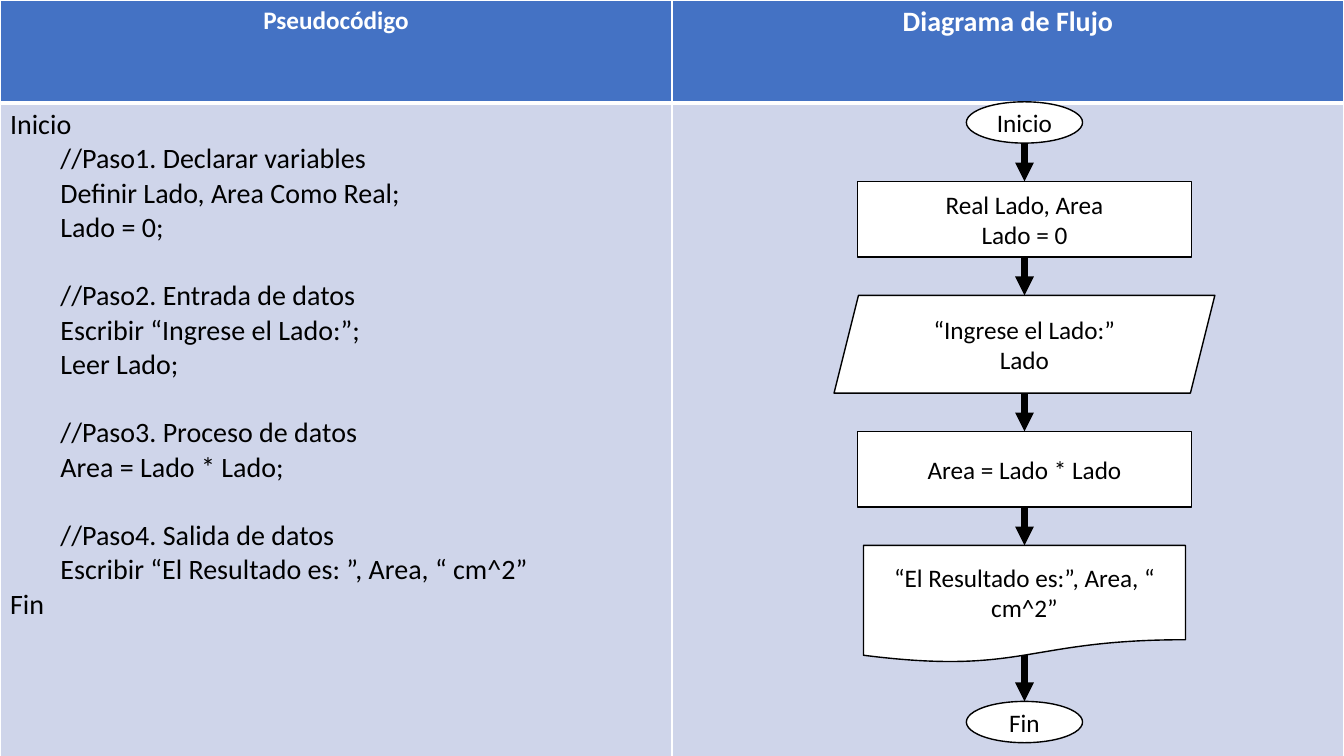
import pptx
import pptx.dml.color
import pptx.enum.shapes
import pptx.enum.text
import pptx.oxml
import pptx.oxml.ns
import pptx.util
from lxml import etree

Pt = pptx.util.Pt
KIND = pptx.enum.shapes.MSO_SHAPE
ALIGN = pptx.enum.text.PP_ALIGN
NS = pptx.oxml.ns.nsdecls("a")

WIDE, HIGH = 960, 540
HEAD = 73.4
MID = 731.8
GAP = 27.4
LINE = 24.4  # one line of 20 pt text
BLACK, WHITE, BLUE, PALE = "000000", "FFFFFF", "4472C4", "CFD5EA"

STEPS = [
    ["//Paso1. Declarar variables", "Definir Lado, Area Como Real;", "Lado = 0;"],
    ["//Paso2. Entrada de datos", "Escribir “Ingrese el Lado:”;", "Leer Lado;"],
    ["//Paso3. Proceso de datos", "Area = Lado * Lado;"],
    ["//Paso4. Salida de datos", "Escribir “El Resultado es: ”, Area, “ cm^2”"],
]

# Kind, width, height, lines of text, overlap of the arrow below
NODES = [
    (KIND.OVAL, 83, 29.5, ["Inicio"], 0),
    (KIND.RECTANGLE, 239, 54, ["Real Lado, Area", "Lado = 0"], 0),
    (KIND.PARALLELOGRAM, 272, 69.8, ["“Ingrese el Lado:”", "Lado"], 0),
    (KIND.RECTANGLE, 239, 54, ["Area = Lado * Lado"], 0),
    (KIND.FLOWCHART_DOCUMENT, 230, 84, ["“El Resultado es:”, Area, “ cm^2”"], 5.6),
    (KIND.OVAL, 83, 29.5, ["Fin"], 0),
]


def tint(code):
    return pptx.dml.color.RGBColor.from_string(code)


def paint(item, code):
    item.fill.solid()
    item.fill.fore_color.rgb = tint(code)


def write(frame, text, first=False, size=18, color=BLACK, bold=False,
          align=ALIGN.CENTER, indent=0, before=0):
    para = frame.paragraphs[0] if first else frame.add_paragraph()
    para.alignment = align
    if before:
        para.space_before = Pt(before)
    if indent:
        para.level = 1
        props = para._p.get_or_add_pPr()
        props.set("marL", str(Pt(indent)))
        props.set("indent", "0")
    run = para.add_run()
    run.text = text
    run.font.name = "Calibri"
    run.font.size = Pt(size)
    run.font.bold = bold
    run.font.color.rgb = tint(color)


def border(cell, top, low):
    props = cell._tc.get_or_add_tcPr()
    sides = [("lnL", 1), ("lnR", 1), ("lnT", top), ("lnB", low)]
    for spot, (side, width) in enumerate(sides):
        props.insert(spot, pptx.oxml.parse_xml(
            f'<a:{side} {NS} w="{Pt(width)}"><a:solidFill>'
            f'<a:srgbClr val="{WHITE}"/></a:solidFill></a:{side}>'))


def add_grid(slide):
    full = 764.6
    grid = slide.shapes.add_table(2, 2, 0, 0, Pt(WIDE), Pt(full)).table
    grid.horz_banding = False
    for col in grid.columns:
        col.width = Pt(WIDE / 2)
    grid.rows[0].height = Pt(HEAD)
    grid.rows[1].height = Pt(full - HEAD)
    for col in range(2):
        for row, (fill, top, low) in enumerate([(BLUE, 1, 3), (PALE, 3, 1)]):
            cell = grid.cell(row, col)
            paint(cell, fill)
            border(cell, top, low)
    return grid


def add_code(frame):
    left = ALIGN.LEFT
    write(frame, "Inicio", first=True, size=20, align=left)
    for step, lines in enumerate(STEPS):
        for row, text in enumerate(lines):
            space = LINE if step and not row else 0
            write(frame, text, size=20, align=left, indent=36, before=space)
    write(frame, "Fin", size=20, align=left)


def add_node(slide, kind, top, width, height, lines):
    node = slide.shapes.add_shape(
        kind, Pt(MID - width / 2), Pt(top), Pt(width), Pt(height))
    node.shadow.inherit = False
    paint(node, WHITE)
    node.line.color.rgb = tint(BLACK)
    node.line.width = Pt(1)
    frame = node.text_frame
    frame.word_wrap = True
    frame.vertical_anchor = pptx.enum.text.MSO_ANCHOR.MIDDLE
    for row, text in enumerate(lines):
        write(frame, text, first=row == 0)


def add_arrow(slide, top, end):
    arrow = slide.shapes.add_connector(
        pptx.enum.shapes.MSO_CONNECTOR.STRAIGHT, Pt(MID), Pt(top), Pt(MID), Pt(end))
    arrow.line.color.rgb = tint(BLACK)
    arrow.line.width = Pt(4.5)
    tag = pptx.oxml.ns.qn
    tip = etree.SubElement(arrow.line._get_or_add_ln(), tag("a:tailEnd"))
    tip.set("type", "triangle")
    etree.SubElement(arrow._element.spPr, tag("a:effectLst"))


def main():
    deck = pptx.Presentation()
    deck.slide_width, deck.slide_height = Pt(WIDE), Pt(HIGH)
    slide = deck.slides.add_slide(deck.slide_layouts[6])

    # Table with headings and pseudocode
    grid = add_grid(slide)
    heads = [("Pseudocódigo", 18), ("Diagrama de Flujo", 20)]
    for col, (text, size) in enumerate(heads):
        write(grid.cell(0, col).text_frame, text, first=True, size=size,
              color=WHITE, bold=True)
    add_code(grid.cell(1, 0).text_frame)

    # Flowchart, stacked at equal gaps
    top = 72.7
    for spot, (kind, width, height, lines, lap) in enumerate(NODES):
        add_node(slide, kind, top, width, height, lines)
        end = top + height
        top = end + GAP
        if spot < len(NODES) - 1:
            add_arrow(slide, end - lap, top)

    deck.save("out.pptx")


if __name__ == "__main__":
    main()
